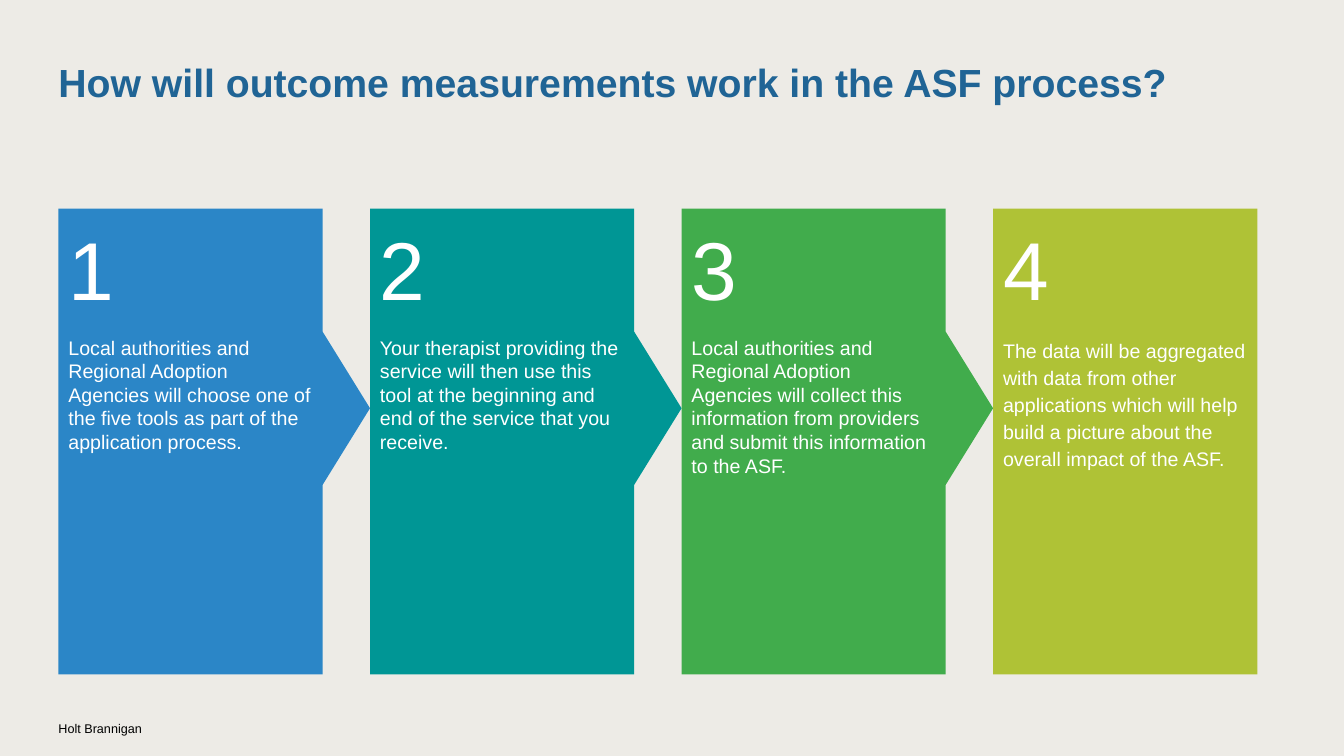
import pptx
import pptx.dml.color
import pptx.enum.shapes
import pptx.enum.text
import pptx.util
from pptx.util import Inches

FONT = "Arial"
WHITE = "FFFFFF"
LEFT = 0.58
PANEL_TOP, PANEL_WIDTH, PANEL_HEIGHT, PANEL_PITCH = 2.07, 2.62, 4.62, 3.09
ARROW_TOP, ARROW_WIDTH, ARROW_HEIGHT = 3.29, 0.94, 1.52

STEPS = [
    ("2B86C7", "Local authorities and Regional Adoption\nAgencies will choose one of the five tools "
               "as part of the application process."),
    ("009695", "Your therapist providing the service will then use this tool at the beginning "
               "and end of the service that you receive."),
    ("41AC4C", "Local authorities and Regional Adoption Agencies will collect this information "
               "from providers and submit this information to the ASF."),
    ("AFC236", "The data will be aggregated with data from other applications which will help "
               "build a picture about the overall impact of the ASF."),
]


def color(value):
    return pptx.dml.color.RGBColor.from_string(value)


def write(paragraph, text, size, text_color, bold=False, space_after=0, line_spacing=1.0):
    paragraph.text = text
    paragraph.alignment = pptx.enum.text.PP_ALIGN.LEFT
    paragraph.space_before = pptx.util.Pt(0)
    paragraph.space_after = pptx.util.Pt(space_after)
    paragraph.line_spacing = line_spacing
    paragraph.font.name = FONT
    paragraph.font.size = pptx.util.Pt(size)
    paragraph.font.bold = bold
    paragraph.font.color.rgb = color(text_color)


def prepare_frame(shape, margin):
    frame = shape.text_frame
    frame.word_wrap = True
    frame.auto_size = pptx.enum.text.MSO_AUTO_SIZE.NONE
    frame.vertical_anchor = pptx.enum.text.MSO_ANCHOR.TOP
    frame.margin_left = frame.margin_right = Inches(margin)
    frame.margin_top = frame.margin_bottom = Inches(margin)
    return frame


def add_filled_shape(slide, kind, left, top, width, height, fill):
    shape = slide.shapes.add_shape(kind, Inches(left), Inches(top), Inches(width), Inches(height))
    shape.shadow.inherit = False
    shape.fill.solid()
    shape.fill.fore_color.rgb = color(fill)
    shape.line.fill.background()
    return shape


def add_arrow(slide, panel_left, fill):
    left = panel_left + PANEL_PITCH - ARROW_WIDTH
    add_filled_shape(slide, pptx.enum.shapes.MSO_SHAPE.PENTAGON,
                     left, ARROW_TOP, ARROW_WIDTH, ARROW_HEIGHT, fill)


def add_panel(slide, left, number, fill, text, is_last):
    panel = add_filled_shape(slide, pptx.enum.shapes.MSO_SHAPE.RECTANGLE,
                             left, PANEL_TOP, PANEL_WIDTH, PANEL_HEIGHT, fill)
    frame = prepare_frame(panel, 0.1)
    write(frame.paragraphs[0], str(number), 58.6, WHITE, space_after=13.3)
    write(frame.add_paragraph(), text, 14, WHITE,
          space_after=10 if is_last else 13.3, line_spacing=1.15 if is_last else 1.0)


def set_title(slide, text):
    title = slide.shapes.title
    title.left, title.top = Inches(LEFT), Inches(0.58)
    title.width, title.height = Inches(12.18), Inches(0.5)
    write(prepare_frame(title, 0).paragraphs[0], text, 28, "206495", bold=True)


def add_footer(slide, text):
    footer = slide.shapes.add_textbox(Inches(LEFT), Inches(7.15), Inches(2.41), Inches(0.16))
    write(prepare_frame(footer, 0).paragraphs[0], text, 9, "000000")


def main():
    presentation = pptx.Presentation()
    presentation.slide_width, presentation.slide_height = Inches(13.33), Inches(7.5)
    slide = presentation.slides.add_slide(presentation.slide_layouts[5])
    slide.background.fill.solid()
    slide.background.fill.fore_color.rgb = color("EDEBE6")

    set_title(slide, "How will outcome measurements work in the ASF process?")
    add_footer(slide, "Holt Brannigan")
    for index, (fill, text) in enumerate(STEPS):
        left = LEFT + index * PANEL_PITCH
        is_last = index == len(STEPS) - 1
        if not is_last:
            add_arrow(slide, left, fill)
        add_panel(slide, left, index + 1, fill, text, is_last)
    presentation.save("out.pptx")


if __name__ == "__main__":
    main()
